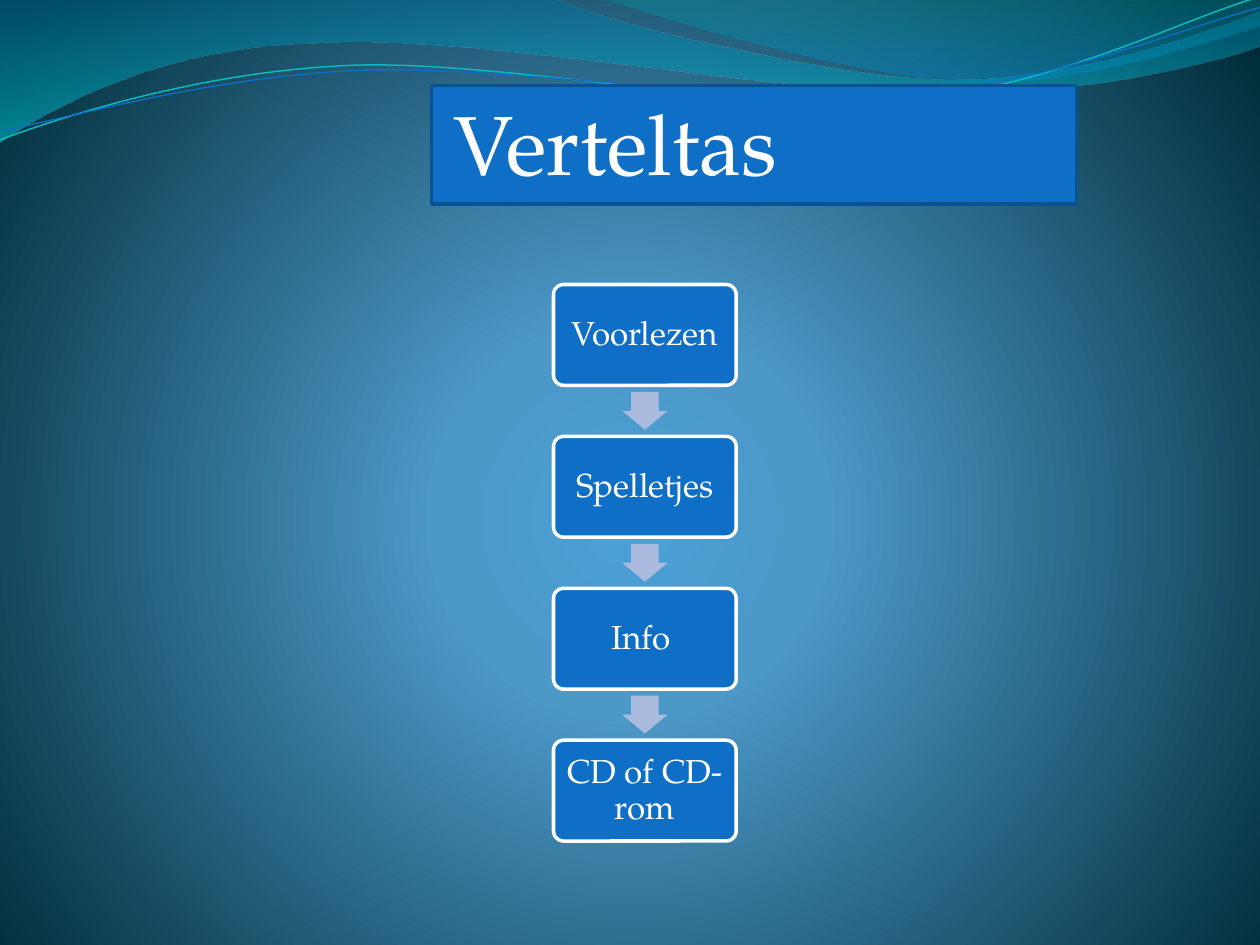
from math import cos, radians, sin

from pptx import Presentation
from pptx.dml.color import RGBColor
from pptx.enum.shapes import MSO_SHAPE
from pptx.enum.text import MSO_ANCHOR, MSO_AUTO_SIZE, PP_ALIGN
from pptx.oxml import parse_xml
from pptx.oxml.ns import nsdecls, qn
from pptx.util import Pt

RECTANGLE, ROUNDED = MSO_SHAPE.RECTANGLE, MSO_SHAPE.ROUNDED_RECTANGLE
RIGHT_ARROW = MSO_SHAPE.RIGHT_ARROW
TOP, MIDDLE = MSO_ANCHOR.TOP, MSO_ANCHOR.MIDDLE
LEFT, CENTER = PP_ALIGN.LEFT, PP_ALIGN.CENTER
FIT_SHAPE = MSO_AUTO_SIZE.SHAPE_TO_FIT_TEXT

FONT = "TeX Gyre Pagella"
WHITE = RGBColor(0xFF, 0xFF, 0xFF)
BLUE = RGBColor(0x0F, 0x6F, 0xC6)
DARK_BLUE = RGBColor(0x0B, 0x52, 0x92)
LAVENDER = RGBColor(0xAB, 0xBB, 0xDF)
TEAL = RGBColor(0x0A, 0xB8, 0xBF)
GLOW = RGBColor(0x4A, 0xA0, 0xD6)
SKY = RGBColor(0x4C, 0x98, 0xC7)
NIGHT = RGBColor(0x00, 0x2C, 0x38)
WAVE_BLUE = RGBColor(0x00, 0x74, 0xA1)
WAVE_TEAL = RGBColor(0x00, 0xC6, 0xCF)
CREST_TEAL = RGBColor(0x00, 0xA1, 0xA9)
CREST_BLUE = RGBColor(0x00, 0x8B, 0xBF)

UNITS_PER_POINT = 100
TILT = -2.7


def set_gradient(fill, element, stops, direction):
    """Stops are (position %, colour, opacity %); direction is a:lin or a:path."""
    fill.gradient()
    stop_xml = "".join(
        f'<a:gs pos="{position * 1000}"><a:srgbClr val="{color}">'
        f'<a:alpha val="{opacity * 1000}"/></a:srgbClr></a:gs>'
        for position, color, opacity in stops)
    gradient = element.find(".//" + qn("a:gradFill"))
    new_gradient = parse_xml(
        f'<a:gradFill {nsdecls("a")} rotWithShape="1"><a:gsLst>{stop_xml}</a:gsLst>'
        f'{direction}</a:gradFill>')
    gradient.getparent().replace(gradient, new_gradient)


def add_wave(start, segments, close, tilt=0, pivot=(0, 0)):
    """Segments hold one point for a line, or three for a Bezier curve."""
    points = [start]
    for segment in segments:
        points += zip(segment[::2], segment[1::2])
    # Level the outline about the pivot; the shape's rotation tilts it again
    cosine, sine = cos(radians(-tilt)), sin(radians(-tilt))
    units = []
    for x, y in points:
        dx, dy = x - pivot[0], y - pivot[1]
        units.append(((pivot[0] + dx * cosine - dy * sine) * UNITS_PER_POINT,
                      (pivot[1] + dx * sine + dy * cosine) * UNITS_PER_POINT))
    builder = slide.shapes.build_freeform(*units[0], scale=Pt(1) / UNITS_PER_POINT)
    builder.add_line_segments(units[1:], close=close)
    wave = builder.convert_to_shape()
    wave.rotation = tilt
    wave.shadow.inherit = False

    # Join each three points of a curve into one Bezier command
    commands = iter(wave.element.findall(".//" + qn("a:lnTo")))
    for segment in segments:
        command = next(commands)
        if len(segment) == 6:
            curve = parse_xml(f'<a:cubicBezTo {nsdecls("a")}/>')
            command.addprevious(curve)
            for line in (command, next(commands), next(commands)):
                curve.append(line[0])
                line.getparent().remove(line)
    return wave


presentation = Presentation()
presentation.slide_width, presentation.slide_height = Pt(720), Pt(540)
slide = presentation.slides.add_slide(presentation.slide_layouts[5])

# Background glow
set_gradient(
    slide.background.fill, slide.element,
    [(0, GLOW, 100), (25, SKY, 100), (100, NIGHT, 100)],
    '<a:path path="circle">'
    '<a:fillToRect l="10000" t="110000" r="10000" b="100000"/></a:path>')

# Filled waves along the top
filled_waves = [
    ((0, 0),
     [(316.8, -0.7), (342.7, 12.2, 478.1, 45.4, 545.8, 45.4),
      (614.2, 45.4, 689.8, 18.7, 720, 6.5), (720.7, 25.9),
      (707.8, 31.7, 626.4, 54.7, 537.1, 54), (447.8, 54, 275, 20.2, 185, 24.5),
      (92.9, 25.9, 33.1, 59.8, -0.7, 81.4), (0, 0)],
     [(0, WAVE_BLUE, 45), (100, WAVE_TEAL, 55)]),
    ((344.9, -0.7),
     [(366.5, 7.9, 491, 44.6, 553.7, 46.8), (616.3, 49.7, 691.9, 23, 720, 15.1),
      (720, 0), (344.9, -0.7)],
     [(0, CREST_TEAL, 30), (80, CREST_BLUE, 45)]),
]
for start, segments, stops in filled_waves:
    wave = add_wave(start, segments, close=True)
    set_gradient(wave.fill, wave.element, stops, '<a:lin ang="5400000" scaled="1"/>')
    wave.line.fill.background()

# Thin wave lines
wave_lines = [
    ((0, 79.9),
     [(34.6, 67, 113.8, 41, 199.4, 37.4), (284.4, 33.8, 427, 64.1, 513.4, 57.6),
      (599.8, 51.1, 675.4, 10.8, 718.6, -1.4)], (359.3, 41.4), TEAL, 0.85),
    ((0, 74.9),
     [(33.8, 69.1, 118.1, 43.9, 203.8, 40.3), (290.2, 36.7, 429.8, 60.5, 516.2, 54),
      (601.9, 48.2, 677.5, 15.1, 720, 4.3)], (359.6, 42.5), BLUE, 0.75),
]
for start, segments, pivot, color, width in wave_lines:
    wave = add_wave(start, segments, False, TILT, pivot)
    wave.fill.background()
    wave.line.color.rgb = color
    wave.line.width = Pt(width)

# Title on its blue panel
panel = slide.shapes.add_shape(RECTANGLE, Pt(246.7), Pt(49), Pt(368.6), Pt(67.7))
panel.shadow.inherit = False
panel.fill.solid()
panel.fill.fore_color.rgb = BLUE
panel.line.color.rgb = DARK_BLUE
panel.line.width = Pt(2)

title = slide.shapes.title
panel.element.addnext(title.element)
title.left, title.top, title.width, title.height = Pt(252), Pt(48.7), Pt(363), Pt(65.5)
title.text_frame.text = "Verteltas"
title.text_frame.vertical_anchor = TOP
title.text_frame.auto_size = FIT_SHAPE
paragraph = title.text_frame.paragraphs[0]
paragraph.alignment = LEFT
font = paragraph.runs[0].font
font.name, font.size = FONT, Pt(48)
font.color.rgb = WHITE

# Vertical process: boxes joined by arrows
steps = ["Voorlezen", "Spelletjes", "Info ", "CD of CD-rom"]
center_x, first_top, pitch = 368.5, 162.6, 86.8
box_width, box_height = 104.4, 57.6
arrow_length, arrow_breadth = 21.6, 26
for index, step in enumerate(steps):
    top = first_top + index * pitch
    box = slide.shapes.add_shape(ROUNDED, Pt(center_x - box_width / 2), Pt(top),
                                 Pt(box_width), Pt(box_height))
    box.adjustments[0] = 0.1
    box.shadow.inherit = False
    box.fill.solid()
    box.fill.fore_color.rgb = BLUE
    box.line.color.rgb = WHITE
    box.line.width = Pt(2)
    frame = box.text_frame
    frame.text = step
    frame.word_wrap = True
    frame.vertical_anchor = MIDDLE
    frame.margin_left = frame.margin_right = Pt(5.8)
    frame.margin_top = frame.margin_bottom = Pt(5.8)
    paragraph = frame.paragraphs[0]
    paragraph.alignment = CENTER
    paragraph.line_spacing = 0.9
    font = paragraph.runs[0].font
    font.name, font.size = FONT, Pt(19)
    font.color.rgb = WHITE

    if index < len(steps) - 1:
        center_y = top + (box_height + pitch) / 2
        arrow = slide.shapes.add_shape(
            RIGHT_ARROW, Pt(center_x - arrow_length / 2), Pt(center_y - arrow_breadth / 2),
            Pt(arrow_length), Pt(arrow_breadth))
        arrow.rotation = 90
        arrow.adjustments[0] = 0.6
        arrow.shadow.inherit = False
        arrow.fill.solid()
        arrow.fill.fore_color.rgb = LAVENDER
        arrow.line.fill.background()

presentation.save("out.pptx")
